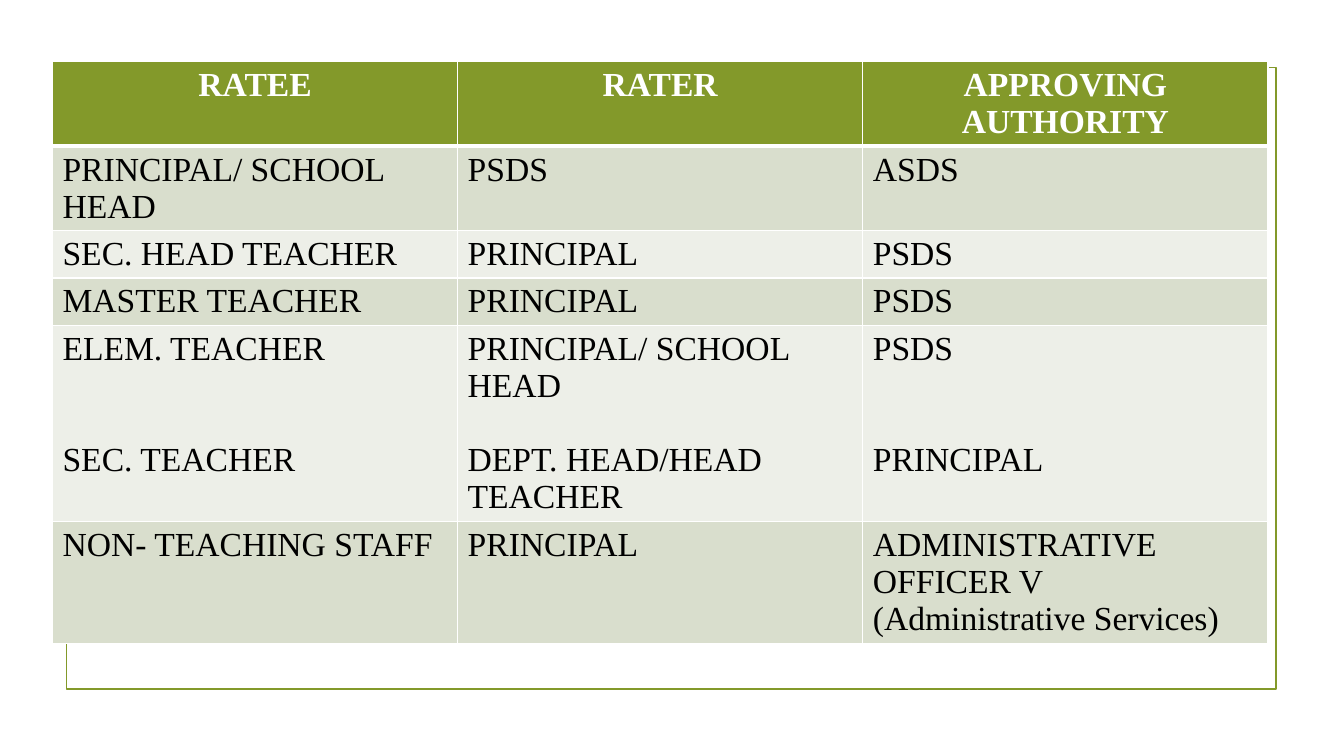
"""Build the slide of ratees, raters and approving authorities."""
from lxml.etree import SubElement
from pptx import Presentation
from pptx.dml.color import RGBColor
from pptx.enum.shapes import MSO_SHAPE as SHAPE
from pptx.enum.text import PP_ALIGN as ALIGN
from pptx.oxml.ns import qn
from pptx.util import Pt


def rgb(value):
    return RGBColor.from_string(value)


def border(cell, side, width):
    ln = SubElement(cell._tc.get_or_add_tcPr(), qn(f"a:{side}"), w=str(Pt(width)))
    fill = SubElement(ln, qn("a:solidFill"))
    SubElement(fill, qn("a:srgbClr"), val="FFFFFF")


GREEN = "83992A"
LINE = 26.6
ROWS = [
    ["RATEE", "RATER", "APPROVING AUTHORITY"],
    ["PRINCIPAL/ SCHOOL HEAD", "PSDS", "ASDS"],
    ["SEC. HEAD TEACHER", "PRINCIPAL", "PSDS"],
    ["MASTER TEACHER", "PRINCIPAL", "PSDS"],
    ["ELEM. TEACHER\nSEC. TEACHER",
     "PRINCIPAL/ SCHOOL HEAD\nDEPT. HEAD/HEAD TEACHER",
     "PSDS\nPRINCIPAL"],
    ["NON- TEACHING STAFF", "PRINCIPAL",
     "ADMINISTRATIVE OFFICER V\n(Administrative Services)"],
]
LINES = [2, 2, 1, 1, 5, 3]
GAPS = {(4, 0): 2 * LINE, (4, 1): LINE, (4, 2): 2 * LINE}

prs = Presentation()
prs.slide_width, prs.slide_height = Pt(960), Pt(540)
s = prs.slides.add_slide(prs.slide_layouts[6])

frame = s.shapes.add_shape(SHAPE.RECTANGLE, Pt(47.5), Pt(48.2), Pt(864), Pt(444.2))
frame.shadow.inherit = False
frame.fill.background()
frame.line.color.rgb = rgb(GREEN)
frame.line.width = Pt(1.25)

heights = [n * LINE + 7.2 for n in LINES]
table = s.shapes.add_table(len(ROWS), 3, Pt(37.5), Pt(44), Pt(868.2),
                           Pt(sum(heights))).table
for col in table.columns:
    col.width = Pt(289.4)

for i, row in enumerate(ROWS):
    table.rows[i].height = Pt(heights[i])
    head = i == 0
    font = {"name": "Times New Roman", "size": Pt(24), "bold": head}
    for j, text in enumerate(row):
        cell = table.cell(i, j)
        widths = {"lnL": 1, "lnR": 1, "lnT": 3 if i == 1 else 1, "lnB": 3 if head else 1}
        for side, width in widths.items():
            border(cell, side, width)
        cell.fill.solid()
        cell.fill.fore_color.rgb = rgb(GREEN if head else "D9DECD" if i % 2 else "EDEFE8")
        tf = cell.text_frame
        tf.text = text
        for k, p in enumerate(tf.paragraphs):
            p.alignment = ALIGN.CENTER if head else ALIGN.LEFT
            if k and (i, j) in GAPS:
                p.space_before = Pt(GAPS[i, j])
            for r in p.runs:
                for name, value in font.items():
                    setattr(r.font, name, value)
                r.font.color.rgb = rgb("FFFFFF" if head else "000000")

prs.save("out.pptx")
